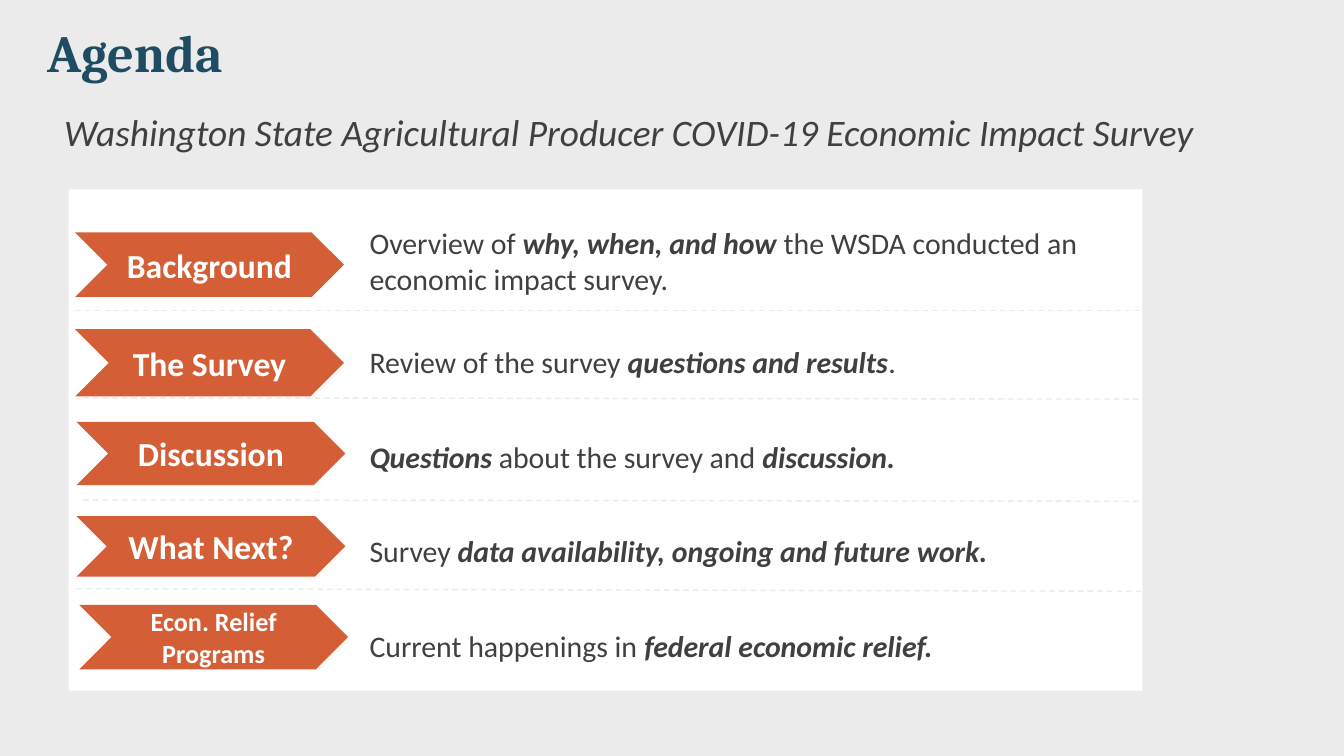
from lxml import etree
from pptx import Presentation
from pptx.dml.color import RGBColor
from pptx.enum.dml import MSO_LINE
from pptx.enum.shapes import MSO_CONNECTOR, MSO_SHAPE
from pptx.enum.text import MSO_ANCHOR, MSO_AUTO_SIZE, PP_ALIGN
from pptx.oxml.ns import qn
from pptx.util import Inches, Pt

RECT, CHEVRON = MSO_SHAPE.RECTANGLE, MSO_SHAPE.CHEVRON
STRAIGHT, DASH = MSO_CONNECTOR.STRAIGHT, MSO_LINE.DASH
LEFT, CENTER = PP_ALIGN.LEFT, PP_ALIGN.CENTER
TOP, MIDDLE = MSO_ANCHOR.TOP, MSO_ANCHOR.MIDDLE
NO_FIT = MSO_AUTO_SIZE.NONE

COLORS = {"back": "EBEBEB", "card": "FFFFFF", "title": "1F4C63",
          "text": "404040", "arrow": "D45F37", "label": "FFFFFF"}

# Label, label size, arrow left, top and height within the card
STEPS = [
    ("Background", 18, 0.05, 0.32, 0.48),
    ("The Survey", 18, 0.05, 1.04, 0.5),
    ("Discussion", 18, 0.06, 1.73, 0.47),
    ("What Next?", 18, 0.06, 2.43, 0.45),
    ("Econ. Relief Programs", 14, 0.08, 3.09, 0.48),
]
# Left, top and drop within the card
DIVIDERS = [(0.05, 0.9, 0), (0.11, 1.55, 0.01), (0.11, 2.31, 0.01), (0.06, 2.97, 0.02)]
# Space before, then runs with their emphasis
TOPICS = [
    (0, [("Overview of ", False), ("why, when, and how ", True),
         ("the WSDA conducted an economic impact survey.", False)]),
    (25.5, [("Review of the survey ", False), ("questions and results", True), (".", False)]),
    (31.5, [("Questions", True), (" about the survey and ", False), ("discussion.", True)]),
    (31.5, [("Survey ", False), ("data availability, ongoing and future work.", True)]),
    (31.5, [("Current happenings in ", False), ("federal economic relief.", True)]),
]


def color(name):
    return RGBColor.from_string(COLORS[name])


def style(r, size, name, bold=False, italic=False, font="Calibri"):
    r.font.name, r.font.size = font, Pt(size)
    r.font.bold, r.font.italic = bold, italic
    r.font.color.rgb = color(name)


def place(sp, x, y, w, h):
    sp.left, sp.top, sp.width, sp.height = (Inches(v) for v in (x, y, w, h))
    tf = sp.text_frame
    tf.word_wrap, tf.auto_size, tf.vertical_anchor = True, NO_FIT, TOP
    return tf


def add_shape(s, kind, x, y, w, h, fill):
    sp = s.shapes.add_shape(kind, Inches(x), Inches(y), Inches(w), Inches(h))
    sp.shadow.inherit = False
    sp.fill.solid()
    sp.fill.fore_color.rgb = color(fill)
    sp.line.fill.background()
    return sp


def add_heading(s, x, y, w, h):
    tf = place(s.shapes.title, x, y, w, h)
    tf.text = "Agenda"
    p = tf.paragraphs[0]
    p.alignment = LEFT
    style(p.runs[0], 28, "title", bold=True, font="Cambria")

    sp = s.shapes.add_textbox(0, 0, 0, 0)
    tf = place(sp, x + 0.13, y + 0.69, 8.67, 0.42)
    tf.text = "Washington State Agricultural Producer COVID-19 Economic Impact Survey"
    p = tf.paragraphs[0]
    p.line_spacing = 0.95
    style(p.runs[0], 20, "text", italic=True)


def add_topics(s, x, y, w, h):
    tf = place(s.placeholders[1], x, y, w, h)
    for i, (gap, parts) in enumerate(TOPICS):
        p = tf.add_paragraph() if i else tf.paragraphs[0]
        p.space_before, p.line_spacing = Pt(gap), 1.0
        pPr = p._p.get_or_add_pPr()
        pPr.set("marL", "0")
        pPr.set("indent", "0")
        etree.SubElement(pPr, qn("a:buNone"))
        for text, strong in parts:
            r = p.add_run()
            r.text = text
            style(r, 16, "text", bold=strong, italic=strong)


def add_arrow(s, x, y, h, label, size):
    sp = add_shape(s, CHEVRON, x, y, 2, h, "arrow")
    tf = sp.text_frame
    tf.word_wrap, tf.vertical_anchor = True, MIDDLE
    tf.text = label
    p = tf.paragraphs[0]
    p.alignment = CENTER
    style(p.runs[0], size, "label", bold=True)


def add_divider(s, x, y, w, drop):
    line = s.shapes.add_connector(STRAIGHT, Inches(x), Inches(y),
                                  Inches(x + w), Inches(y + drop))
    line.line.color.rgb = color("back")
    line.line.width, line.line.dash_style = Pt(0.75), DASH
    etree.SubElement(line._element.spPr, qn("a:effectLst"))


def add_agenda(s, x, y, w, h):
    card = add_shape(s, RECT, x, y, w, h, "card")
    s.shapes._spTree.insert(2, card._element)
    add_topics(s, x + 2.14, y + 0.21, 6.25, 3.45)
    for left, top, drop in DIVIDERS:
        add_divider(s, x + left, y + top, 7.92, drop)
    for label, size, left, top, height in STEPS:
        add_arrow(s, x + left, y + top, height, label, size)


def main():
    prs = Presentation()
    prs.slide_width = Inches(10)
    prs.slide_height = prs.slide_width * 9 // 16
    s = prs.slides.add_slide(prs.slide_layouts[1])
    s.background.fill.solid()
    s.background.fill.fore_color.rgb = color("back")
    add_heading(s, 0.25, 0.1, 9.67, 0.57)
    add_agenda(s, 0.51, 1.41, 7.99, 3.73)
    prs.save("out.pptx")


if __name__ == "__main__":
    main()
